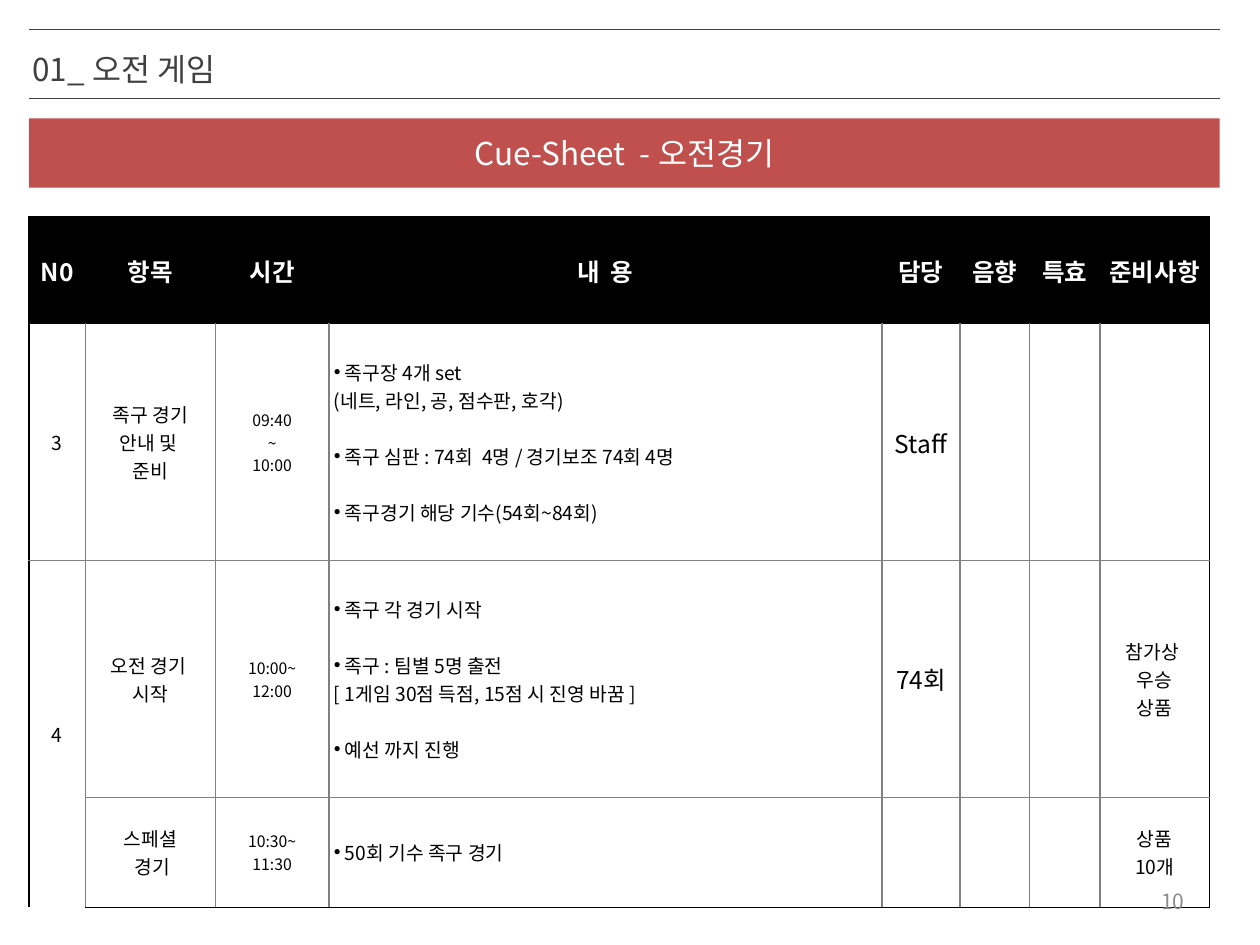
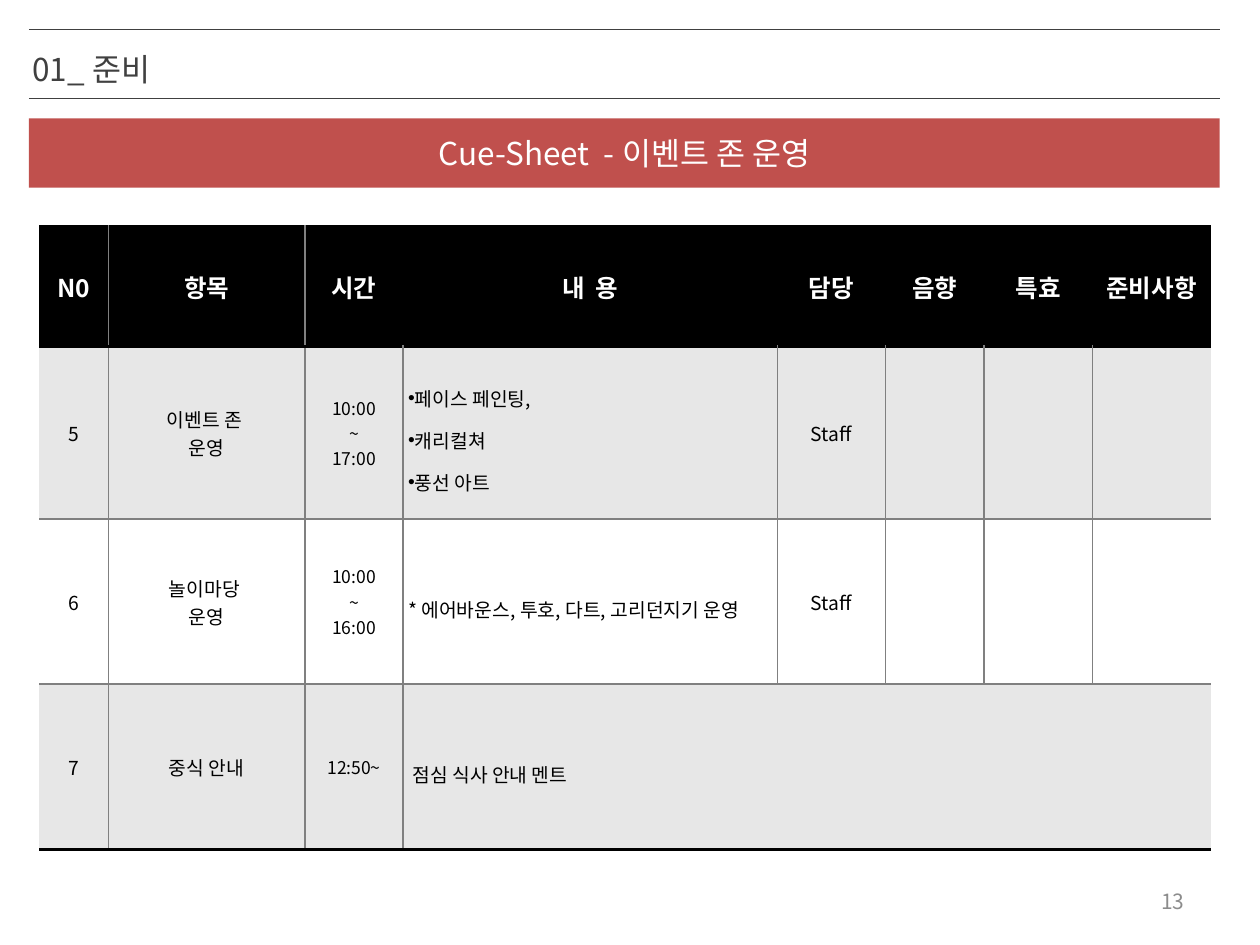
from lxml import etree
from pptx import Presentation
from pptx.dml.color import RGBColor
from pptx.enum import shapes, text
from pptx.oxml import ns
from pptx.util import Inches, Pt

FONT = "Noto Sans CJK KR"
BLACK = RGBColor(0x00, 0x00, 0x00)
WHITE = RGBColor(0xFF, 0xFF, 0xFF)
RED = RGBColor(0xC0, 0x50, 0x4D)
DARK = RGBColor(0x40, 0x40, 0x40)
GREY = RGBColor(0x80, 0x80, 0x80)
PALE = RGBColor(0xE7, 0xE7, 0xE7)
NUMBER_GREY = RGBColor(0x8C, 0x8C, 0x8C)

LEFT, RIGHT = 0.23, 9.68
RULE_TOPS = (0.23, 0.78)
NO_STYLE = "{2D5ABB26-0587-4C30-8999-92F81FD0307C}"
GRID = (GREY, 1)
CONTENT_COLUMN = 3
HEADER = ["N0", "항목", "시간", "내  용", "담당", "음향", "특효", "준비사항"]

# In a cell, a line break starts a paragraph and an empty line asks for a gap.
SHEETS = [
    {
        "title": "01_ 오전 게임",
        "band": "Cue-Sheet  - 오전경기",
        "number": "10",
        "corner": (0.23, 1.72),
        "columns": [0.45, 1.03, 0.9, 4.39, 0.62, 0.55, 0.56, 0.87],
        "heights": [0.85, 1.88, 1.88, 0.87],
        "rows": [
            ["3", "족구 경기\n안내 및 \n준비", "09:40\n~\n10:00",
             "• 족구장 4개 set\n(네트, 라인, 공, 점수판, 호각)\n\n"
             "• 족구 심판 : 74회  4명 / 경기보조 74회 4명\n\n"
             "• 족구경기 해당 기수(54회~84회)", "Staff", "", "", ""],
            ["4", "오전 경기 \n시작", "10:00~\n12:00",
             "• 족구 각 경기 시작\n\n"
             "• 족구 : 팀별 5명 출전\n[ 1게임 30점 득점, 15점 시 진영 바꿈 ]\n\n"
             "• 예선 까지 진행", "74회", "", "", "참가상 \n우승\n상품"],
            ["", "스페셜\n 경기", "10:30~\n11:30",
             "• 50회 기수 족구 경기", "", "", "", "상품\n10개"],
        ],
        "merge": ((2, 0), (3, 0)),
        "sizes": {2: 9, 4: 14},
        "spacing": 1.0,
        "stripe": WHITE,
        "side": (BLACK, 0.75),
        "cap": (BLACK, 0.75),
        "header_rules": 0,
    },
    {
        "title": "01_ 준비",
        "band": "Cue-Sheet  - 이벤트 존 운영",
        "number": "13",
        "corner": (0.31, 1.8),
        "columns": [0.55, 1.56, 0.78, 2.97, 0.86, 0.78, 0.86, 0.94],
        "heights": [0.95, 1.37, 1.31, 1.31],
        "rows": [
            ["5", "이벤트 존 \n운영", "10:00\n~\n17:00",
             "•페이스 페인팅,\n•캐리컬쳐\n•풍선 아트", "Staff", "", "", ""],
            ["6", "놀이마당 \n운영", "10:00\n~\n16:00",
             "* 에어바운스, 투호, 다트, 고리던지기 운영", "Staff", "", "", ""],
            ["7", "중식 안내", "12:50~", " 점심 식사 안내 멘트", "", "", "", ""],
        ],
        "merge": ((3, 3), (3, 7)),
        "sizes": {2: 10},
        "spacing": 1.5,
        "stripe": PALE,
        "side": None,
        "cap": (BLACK, 2),
        "header_rules": 2,
    },
]


def add_span(para, words, size, colour, bold=False):
    span = para.add_run()
    span.text = words
    span.font.size = Pt(size)
    span.font.bold = bold
    span.font.name = FONT
    span.font.color.rgb = colour
    east = etree.SubElement(span.font._element, ns.qn("a:ea"))
    east.set("typeface", FONT)


def add_bullet(para):
    props = para._p.get_or_add_pPr()
    props.set("marL", "0")
    props.set("indent", "0")
    etree.SubElement(props, ns.qn("a:buFont")).set("typeface", "Arial")
    etree.SubElement(props, ns.qn("a:buChar")).set("char", "•")


def add_rule(page, top):
    rule = page.shapes.add_connector(
        shapes.MSO_CONNECTOR.STRAIGHT,
        Inches(LEFT), Inches(top), Inches(RIGHT), Inches(top))
    rule.line.color.rgb = DARK
    rule.line.width = Pt(0.25)
    etree.SubElement(rule._element.spPr, ns.qn("a:effectLst"))


def add_label(page, place, words, size, colour):
    """Add a one-line text box and return it with its paragraph."""
    box = page.shapes.add_textbox(*map(Inches, place))
    box.text_frame.word_wrap = True
    para = box.text_frame.paragraphs[0]
    add_span(para, words, size, colour)
    return box, para


def add_frame(page, sheet):
    """Add the parts every page has: band, rules, title and page number."""
    band = page.shapes.add_shape(
        shapes.MSO_SHAPE.RECTANGLE,
        Inches(LEFT), Inches(0.94), Inches(RIGHT - LEFT), Inches(0.55))
    band.shadow.inherit = False
    band.fill.solid()
    band.fill.fore_color.rgb = RED
    band.line.fill.background()
    band.text_frame.vertical_anchor = text.MSO_ANCHOR.MIDDLE
    para = band.text_frame.paragraphs[0]
    para.alignment = text.PP_ALIGN.CENTER
    add_span(para, sheet["band"], 18, WHITE)

    for top in RULE_TOPS:
        add_rule(page, top)

    _, para = add_label(page, (0.16, 0.39, 7.17, 0.36), sheet["title"], 18, DARK)
    para.line_spacing = 0.85


def add_number(page, number):
    box, para = add_label(page, (7.17, 6.95, 2.33, 0.4), number, 12, NUMBER_GREY)
    box.text_frame.vertical_anchor = text.MSO_ANCHOR.MIDDLE
    para.alignment = text.PP_ALIGN.RIGHT


def fill_cell(cell, words, size, colour, bold, centred, spacing):
    cell.vertical_anchor = text.MSO_ANCHOR.MIDDLE
    cell.margin_left = cell.margin_right = Inches(0.04)
    cell.margin_top = cell.margin_bottom = Inches(0.05)
    frame = cell.text_frame
    para = frame.paragraphs[0]
    for g, group in enumerate(words.split("\n\n")):
        for n, line in enumerate(group.split("\n")):
            if g or n:
                para = frame.add_paragraph()
            if g and not n:
                para.space_before = Pt(16)
            para.alignment = text.PP_ALIGN.CENTER if centred else text.PP_ALIGN.LEFT
            if spacing != 1:
                para.line_spacing = spacing
            if line.startswith("•"):
                add_bullet(para)
                line = line[1:]
            if line:
                add_span(para, line, size, colour, bold)


def set_borders(cell, edges):
    """Draw left, right, top and bottom; None stands for no line."""
    props = cell._tc.get_or_add_tcPr()
    for index, (side, edge) in enumerate(zip("LRTB", edges)):
        line = etree.Element(ns.qn(f"a:ln{side}"))
        props.insert(index, line)
        if edge is None:
            etree.SubElement(line, ns.qn("a:noFill"))
            continue
        colour, width = edge
        line.set("w", str(Pt(width)))
        paint = etree.SubElement(line, ns.qn("a:solidFill"))
        etree.SubElement(paint, ns.qn("a:srgbClr")).set("val", str(colour))


def cell_edges(sheet, row, col, row_count, col_count):
    (top, left), (bottom, right) = sheet["merge"]

    def merged(r, c):
        return top <= r <= bottom and left <= c <= right

    def vertical(c):
        """Line on the left of column c."""
        if c in (0, col_count):
            return sheet["side"]
        if merged(row, c - 1) and merged(row, c):
            return None
        return GRID if row or c <= sheet["header_rules"] else None

    def horizontal(r):
        """Line above row r."""
        if r in (0, 1, row_count):
            return sheet["cap"]
        return None if merged(r - 1, col) and merged(r, col) else GRID

    return vertical(col), vertical(col + 1), horizontal(row), horizontal(row + 1)


def add_cue_table(page, sheet):
    rows = [HEADER] + sheet["rows"]
    columns, heights = sheet["columns"], sheet["heights"]
    place = (*sheet["corner"], sum(columns), sum(heights))
    table = page.shapes.add_table(
        len(rows), len(columns), *map(Inches, place)).table
    table._tbl.tblPr.find(ns.qn("a:tableStyleId")).text = NO_STYLE
    for column, width in zip(table.columns, columns):
        column.width = Inches(width)
    for row, height in zip(table.rows, heights):
        row.height = Inches(height)
    first, last = sheet["merge"]
    table.cell(*first).merge(table.cell(*last))

    for r, row in enumerate(rows):
        for c, words in enumerate(row):
            cell = table.cell(r, c)
            head = r == 0
            content = c == CONTENT_COLUMN and not head
            cell.fill.solid()
            cell.fill.fore_color.rgb = (
                BLACK if head else sheet["stripe"] if r % 2 else WHITE)
            fill_cell(cell, words,
                      size=14 if head else sheet["sizes"].get(c, 11),
                      colour=WHITE if head else BLACK,
                      bold=head, centred=not content,
                      spacing=sheet["spacing"] if content else 1)
            set_borders(cell, cell_edges(sheet, r, c, len(rows), len(columns)))


def main():
    deck = Presentation()
    deck.slide_width, deck.slide_height = Inches(10), Inches(7.5)
    for sheet in SHEETS:
        page = deck.slides.add_slide(deck.slide_layouts[6])
        add_frame(page, sheet)
        add_cue_table(page, sheet)
        add_number(page, sheet["number"])
    deck.save("out.pptx")


if __name__ == "__main__":
    main()
